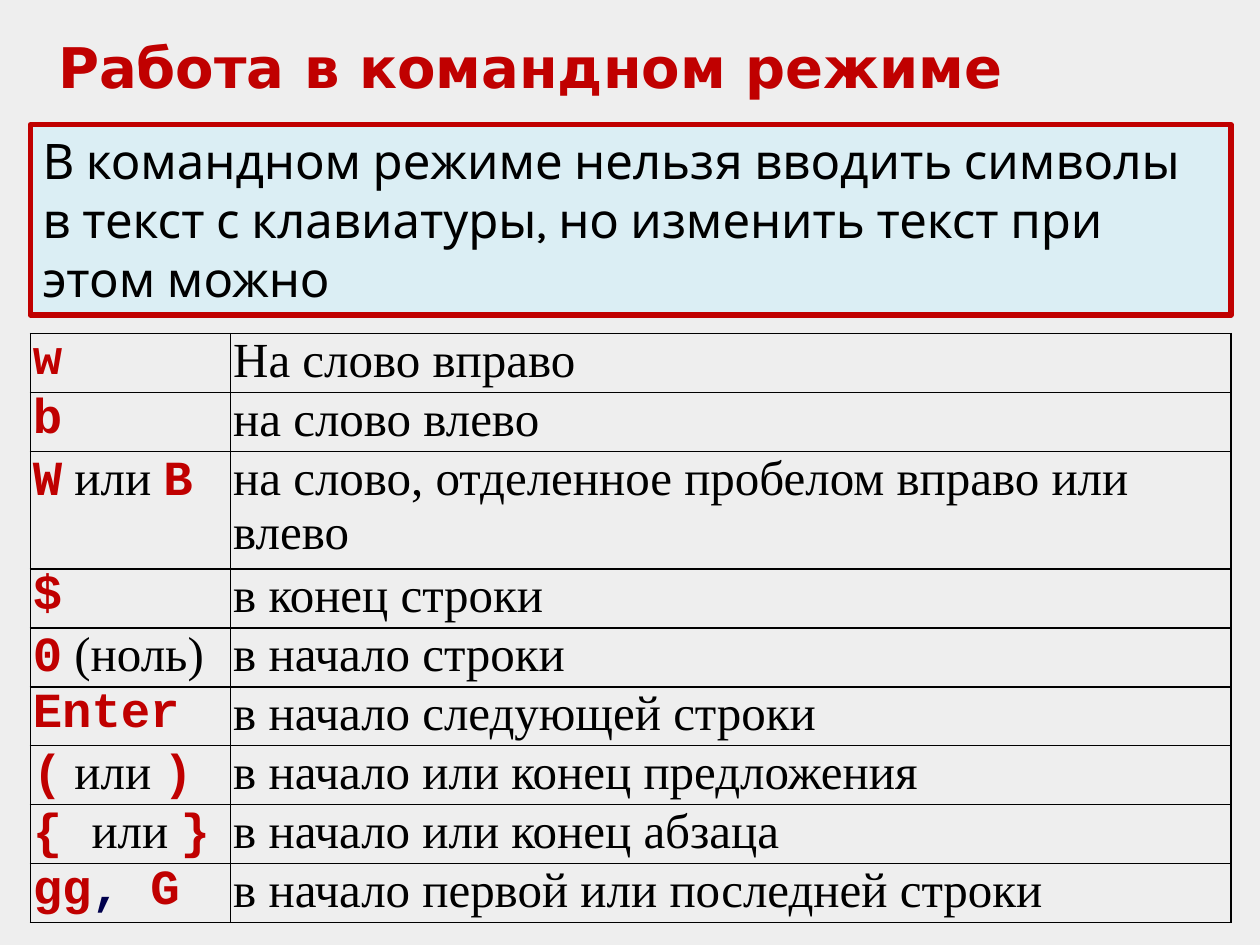
from lxml import etree
from pptx import Presentation
from pptx.dml.color import RGBColor
from pptx.enum import shapes, text
from pptx.oxml import ns
from pptx.util import Pt

RED = RGBColor(0xC0, 0x00, 0x00)
BLACK = RGBColor(0x00, 0x00, 0x00)
NAVY = RGBColor(0x00, 0x00, 0x4C)
PALE = RGBColor(0xDB, 0xEE, 0xF4)
GRAY = RGBColor(0xEE, 0xEE, 0xEE)

KEY = ("Courier New", RED, True)
MARK = ("Courier New", NAVY, True)
BODY = ("Times New Roman", BLACK, False)

LEFT, WIDTH = 17.3, 686.2
ROW = 33.65


def style(font, size, name, color, bold):
    font.size = Pt(size)
    font.name = name
    font.color.rgb = color
    font.bold = bold


def frame(cell):
    props = cell._tc.get_or_add_tcPr()
    for i, side in enumerate(("lnL", "lnR", "lnT", "lnB")):
        line = etree.Element(ns.qn("a:" + side), w=str(Pt(1)))
        fill = etree.SubElement(line, ns.qn("a:solidFill"))
        etree.SubElement(fill, ns.qn("a:srgbClr"), val=str(BLACK))
        props.insert(i, line)


deck = Presentation()
deck.slide_width, deck.slide_height = Pt(720), Pt(540)
slide = deck.slides.add_slide(deck.slide_layouts[5])
slide.background.fill.solid()
slide.background.fill.fore_color.rgb = GRAY

title = slide.shapes.title
title.left, title.top, title.width, title.height = Pt(26), Pt(15.1), Pt(668), Pt(46)
title.text_frame.text = "Работа в командном режиме"
title.text_frame.vertical_anchor = text.MSO_ANCHOR.TOP
para = title.text_frame.paragraphs[0]
para.alignment = text.PP_ALIGN.LEFT
style(para.font, 32, "DejaVu Sans", RED, True)

note = slide.shapes.add_shape(
    shapes.MSO_SHAPE.RECTANGLE, Pt(LEFT), Pt(71.3), Pt(WIDTH), Pt(108.7))
note.shadow.inherit = False
note.fill.solid()
note.fill.fore_color.rgb = PALE
note.line.color.rgb = RED
note.line.width = Pt(3)
note.text_frame.text = ("В командном режиме нельзя вводить символы "
                        "в текст с клавиатуры, но изменить текст при этом можно")
note.text_frame.vertical_anchor = text.MSO_ANCHOR.TOP
para = note.text_frame.paragraphs[0]
para.alignment = text.PP_ALIGN.LEFT
style(para.font, 28, "Karla", BLACK, False)

rows = [
    ([("w", KEY)], "На слово вправо"),
    ([("b", KEY)], "на слово влево"),
    ([("W", KEY), (" или ", BODY), ("B", KEY)],
     "на слово, отделенное пробелом вправо или влево"),
    ([("$", KEY)], "в конец строки"),
    ([("0", KEY), (" (ноль)", BODY)], "в начало строки"),
    ([("Enter", KEY)], "в начало следующей строки"),
    ([("(", KEY), (" или ", BODY), (")", KEY)], "в начало или конец предложения"),
    ([("{ ", KEY), ("или ", BODY), ("}", KEY)], "в начало или конец абзаца"),
    ([("gg", KEY), (", ", MARK), ("G", KEY)], "в начало первой или последней строки"),
]
TALL = 2

table = slide.shapes.add_table(
    len(rows), 2, Pt(LEFT), Pt(190.6), Pt(WIDTH), Pt(ROW * (len(rows) + 1))).table
table.first_row = table.horz_banding = False
table.columns[0].width = Pt(114.5)
table.columns[1].width = Pt(WIDTH - 114.5)
for i, (keys, sense) in enumerate(rows):
    table.rows[i].height = Pt(ROW * 2 if i == TALL else ROW)
    for j, parts in enumerate((keys, [(sense, BODY)])):
        cell = table.cell(i, j)
        cell.margin_left = cell.margin_right = Pt(1.5)
        cell.margin_top = cell.margin_bottom = 0
        cell.fill.background()
        frame(cell)
        para = cell.text_frame.paragraphs[0]
        for word, look in parts:
            run = para.add_run()
            run.text = word
            if len(parts) > 1:
                style(run.font, 28, *look)
        if len(parts) == 1:
            style(para.font, 28, *parts[0][1])

deck.save("out.pptx")
